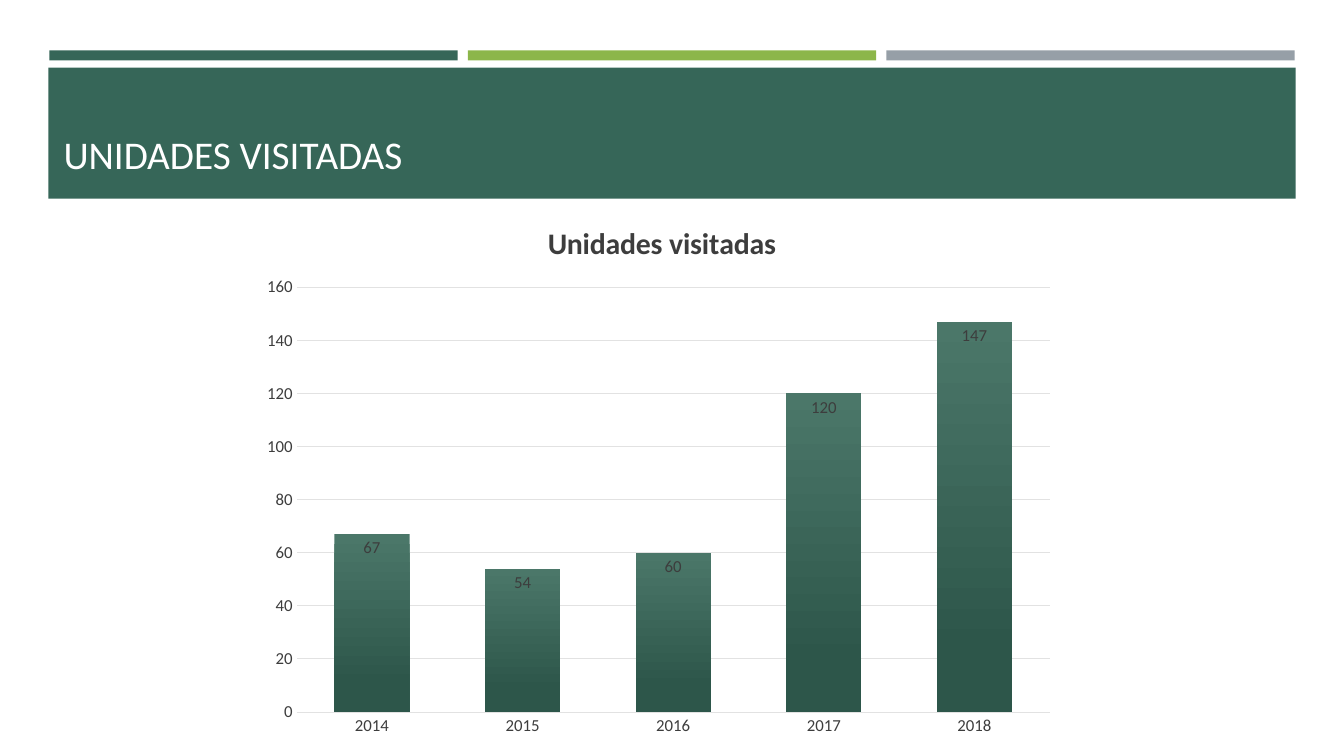
from pptx import Presentation
from pptx.chart.data import CategoryChartData
from pptx.dml.color import RGBColor
from pptx.enum.chart import XL_CHART_TYPE, XL_LABEL_POSITION, XL_TICK_MARK
from pptx.enum.shapes import MSO_SHAPE
from pptx.enum.text import MSO_ANCHOR, MSO_AUTO_SIZE, PP_ALIGN
from pptx.oxml import parse_xml
from pptx.oxml.ns import nsdecls
from pptx.util import Inches, Pt

RECT = MSO_SHAPE.RECTANGLE
COLUMN = XL_CHART_TYPE.COLUMN_CLUSTERED
INSIDE_END = XL_LABEL_POSITION.INSIDE_END
NO_TICK = XL_TICK_MARK.NONE
BOTTOM = MSO_ANCHOR.BOTTOM
NO_FIT = MSO_AUTO_SIZE.NONE
LEFT = PP_ALIGN.LEFT

GREEN = RGBColor(0x36, 0x66, 0x58)
LIME = RGBColor(0x8C, 0xB6, 0x4A)
GRAY = RGBColor(0x96, 0x9F, 0xA7)
WHITE = RGBColor(0xFF, 0xFF, 0xFF)
INK = RGBColor(0x3D, 0x3D, 0x3D)
GRID = RGBColor(0xE2, 0xE2, 0xE2)
TOP_TONE = RGBColor(0x4B, 0x77, 0x69)
LOW_TONE = RGBColor(0x2D, 0x56, 0x4A)

VISITS = {"2014": 67, "2015": 54, "2016": 60, "2017": 120, "2018": 147}


def set_font(font, size, color=INK, bold=False):
    font.name = "Calibri"
    font.size = Pt(size)
    font.color.rgb = color
    font.bold = bold


def write(frame, text, **style):
    frame.text = text
    para = frame.paragraphs[0]
    para.alignment = LEFT
    set_font(para.runs[0].font, **style)


def set_line(line):
    line.color.rgb = GRID
    line.width = Pt(0.75)


def set_plot(chart, **box):
    """Fix the inner plot area as fractions of the chart."""
    parts = "".join(f'<c:{key} val="{val}"/>' for key, val in box.items())
    area = chart.element.chart.plotArea
    for old in area.findall("{*}layout"):
        area.remove(old)
    area.insert(0, parse_xml(
        f'<c:layout {nsdecls("c")}><c:manualLayout>'
        '<c:layoutTarget val="inner"/><c:xMode val="edge"/><c:yMode val="edge"/>'
        f'{parts}</c:manualLayout></c:layout>'))


class Page:
    def __init__(self, deck):
        self.slide = deck.slides.add_slide(deck.slide_layouts[5])
        self.shapes = self.slide.shapes

    def bar(self, color, *box):
        shape = self.shapes.add_shape(RECT, *map(Inches, box))
        shape.shadow.inherit = False
        shape.fill.solid()
        shape.fill.fore_color.rgb = color
        shape.line.fill.background()

    def title(self, text, *box):
        title = self.shapes.title
        title.left, title.top, title.width, title.height = map(Inches, box)
        frame = title.text_frame
        frame.auto_size = NO_FIT
        frame.vertical_anchor = BOTTOM
        write(frame, text, size=28, color=WHITE)
        # Bring the title in front of the band
        title.element.getparent().append(title.element)

    def chart(self, name, values, *box):
        data = CategoryChartData()
        data.categories = list(values)
        data.add_series(name, list(values.values()))
        chart = self.shapes.add_chart(COLUMN, *map(Inches, box), data).chart
        set_font(chart.font, 12)
        chart.has_legend = False
        chart.has_title = True
        frame = chart.chart_title.text_frame
        frame.text = name
        set_font(frame.paragraphs[0].runs[0].font, 21.3, bold=True)
        chart.chart_title.include_in_layout = False
        set_plot(chart, x=0.05, y=0.158, w=0.928, h=0.775)
        self.axes(chart)
        self.columns(chart.plots[0])

    def axes(self, chart):
        for axis in (chart.category_axis, chart.value_axis):
            axis.major_tick_mark = axis.minor_tick_mark = NO_TICK
            set_font(axis.tick_labels.font, 12)
        set_line(chart.category_axis.format.line)
        axis = chart.value_axis
        axis.minimum_scale, axis.maximum_scale, axis.major_unit = 0, 160, 20
        axis.format.line.fill.background()
        set_line(axis.major_gridlines.format.line)

    def columns(self, plot):
        plot.gap_width, plot.overlap = 100, -24
        plot.vary_by_categories = False
        series = plot.series[0]
        fill = series.format.fill
        fill.gradient()
        fill.gradient_angle = 270
        tones = ((0, TOP_TONE), (0.84, LOW_TONE))
        for stop, (place, tone) in zip(fill.gradient_stops, tones):
            stop.position = place
            stop.color.rgb = tone
        labels = series.data_labels
        labels.show_value = True
        labels.position = INSIDE_END
        set_font(labels.font, 12)


def main():
    deck = Presentation()
    deck.slide_width, deck.slide_height = Inches(13.33), Inches(7.5)
    page = Page(deck)
    for col, color in enumerate((GREEN, LIME, GRAY)):
        page.bar(color, 0.49 + 4.15 * col, 0.5, 4.05, 0.1)
    page.bar(GREEN, 0.48, 0.67, 12.37, 1.3)
    page.title("UNIDADES VISITADAS", 0.53, 0.7, 12.06, 1.11)
    page.chart("Unidades visitadas", VISITS, 2.54, 1.99, 8.05, 5.44)
    deck.save("out.pptx")


if __name__ == "__main__":
    main()
